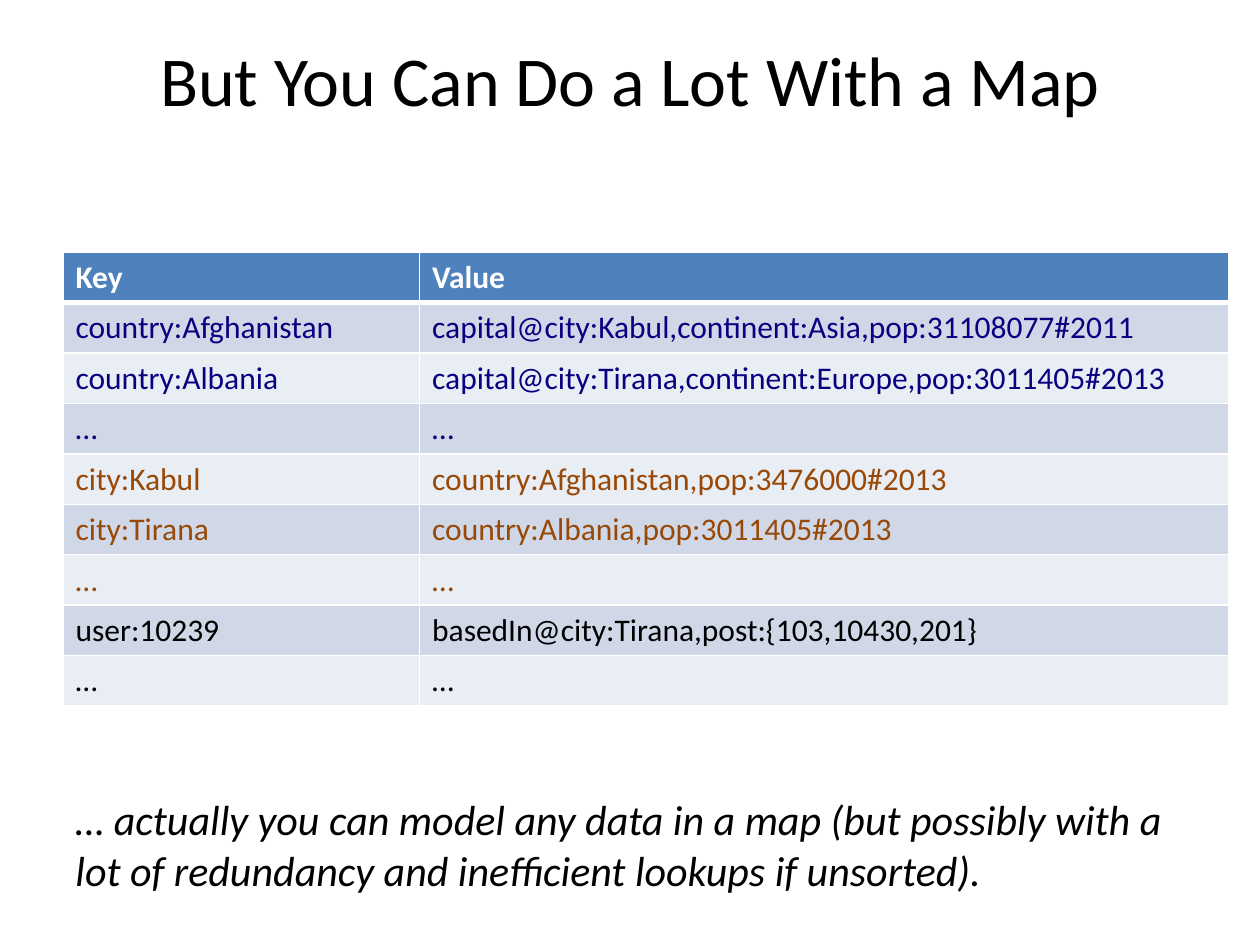
from lxml import etree
from pptx import Presentation
from pptx.dml.color import RGBColor
from pptx.enum.text import MSO_ANCHOR, PP_ALIGN
from pptx.oxml.ns import qn
from pptx.util import Inches, Pt

MIDDLE, TOP = MSO_ANCHOR.MIDDLE, MSO_ANCHOR.TOP
LEFT, CENTER = PP_ALIGN.LEFT, PP_ALIGN.CENTER

BLACK, WHITE, BLUE, NAVY, BROWN = "000000", "FFFFFF", "4F81BD", "0B0080", "984807"
BANDS = ("D0D8E8", "E9EDF4")
HEADER = ("Key", "Value")
ENTRIES = [
    ("country:Afghanistan", "capital@city:Kabul,continent:Asia,pop:31108077#2011", NAVY),
    ("country:Albania", "capital@city:Tirana,continent:Europe,pop:3011405#2013", NAVY),
    ("…", "…", NAVY),
    ("city:Kabul", "country:Afghanistan,pop:3476000#2013", BROWN),
    ("city:Tirana", "country:Albania,pop:3011405#2013", BROWN),
    ("…", "…", BROWN),
    ("user:10239", "basedIn@city:Tirana,post:{103,10430,201}", BLACK),
    ("…", "…", BLACK),
]


def rgb(color):
    return RGBColor.from_string(color)


class SlideBuilder:
    """Holds the text style and the current slide, and adds elements to it."""

    font = "Calibri"

    def __init__(self, s):
        self.s = s

    def style(self, tf, size, color, bold=False, italic=False, align=LEFT):
        for p in tf.paragraphs:
            p.alignment = align
            for r in p.runs:
                r.font.name, r.font.size = self.font, Pt(size)
                r.font.bold, r.font.italic = bold, italic
                r.font.color.rgb = rgb(color)

    def text(self, text, x, y, w, h, size, anchor=TOP, align=LEFT, italic=False):
        tf = self.s.shapes.add_textbox(Inches(x), Inches(y), Inches(w), Inches(h)).text_frame
        tf.word_wrap = True
        tf.vertical_anchor = anchor
        tf.text = text
        self.style(tf, size, BLACK, italic=italic, align=align)

    def borders(self, cell, top, bottom):
        tcPr = cell._tc.get_or_add_tcPr()
        for side, width in (("lnL", 1), ("lnR", 1), ("lnT", top), ("lnB", bottom)):
            ln = etree.SubElement(tcPr, qn(f"a:{side}"), w=str(Pt(width)))
            fill = etree.SubElement(ln, qn("a:solidFill"))
            etree.SubElement(fill, qn("a:srgbClr"), val=WHITE)

    def cell(self, cell, text, fill, color, bold=False, anchor=MIDDLE, top=1, bottom=1):
        self.borders(cell, top, bottom)
        cell.fill.solid()
        cell.fill.fore_color.rgb = rgb(fill)
        cell.vertical_anchor = anchor
        cell.text = text
        self.style(cell.text_frame, 18, color, bold)

    def table(self, header, entries, x, y, widths, row_height):
        count = len(entries) + 1
        table = self.s.shapes.add_table(
            count, len(widths), Inches(x), Inches(y),
            Inches(sum(widths)), Inches(row_height * count)).table
        for column, width in zip(table.columns, widths):
            column.width = Inches(width)
        for c, text in enumerate(header):
            self.cell(table.cell(0, c), text, BLUE, WHITE, True, TOP, bottom=3)
        for i, (*texts, color) in enumerate(entries):
            for c, text in enumerate(texts):
                self.cell(table.cell(i + 1, c), text, BANDS[i % 2], color,
                          top=1 if i else 3)


def main():
    prs = Presentation()
    prs.slide_width, prs.slide_height = Inches(10), Inches(7.5)
    slide = SlideBuilder(prs.slides.add_slide(prs.slide_layouts[6]))
    slide.text("But You Can Do a Lot With a Map", 0.5, 0, 9, 1.25, 40, MIDDLE, CENTER)
    slide.table(HEADER, ENTRIES, 0.5, 2, (2.83, 6.42), 0.4)
    slide.text("… actually you can model any data in a map (but possibly with a lot of "
               "redundancy and inefficient lookups if unsorted).",
               0.5, 6.25, 9.25, 0.91, 24, italic=True)
    prs.save("out.pptx")


if __name__ == "__main__":
    main()
